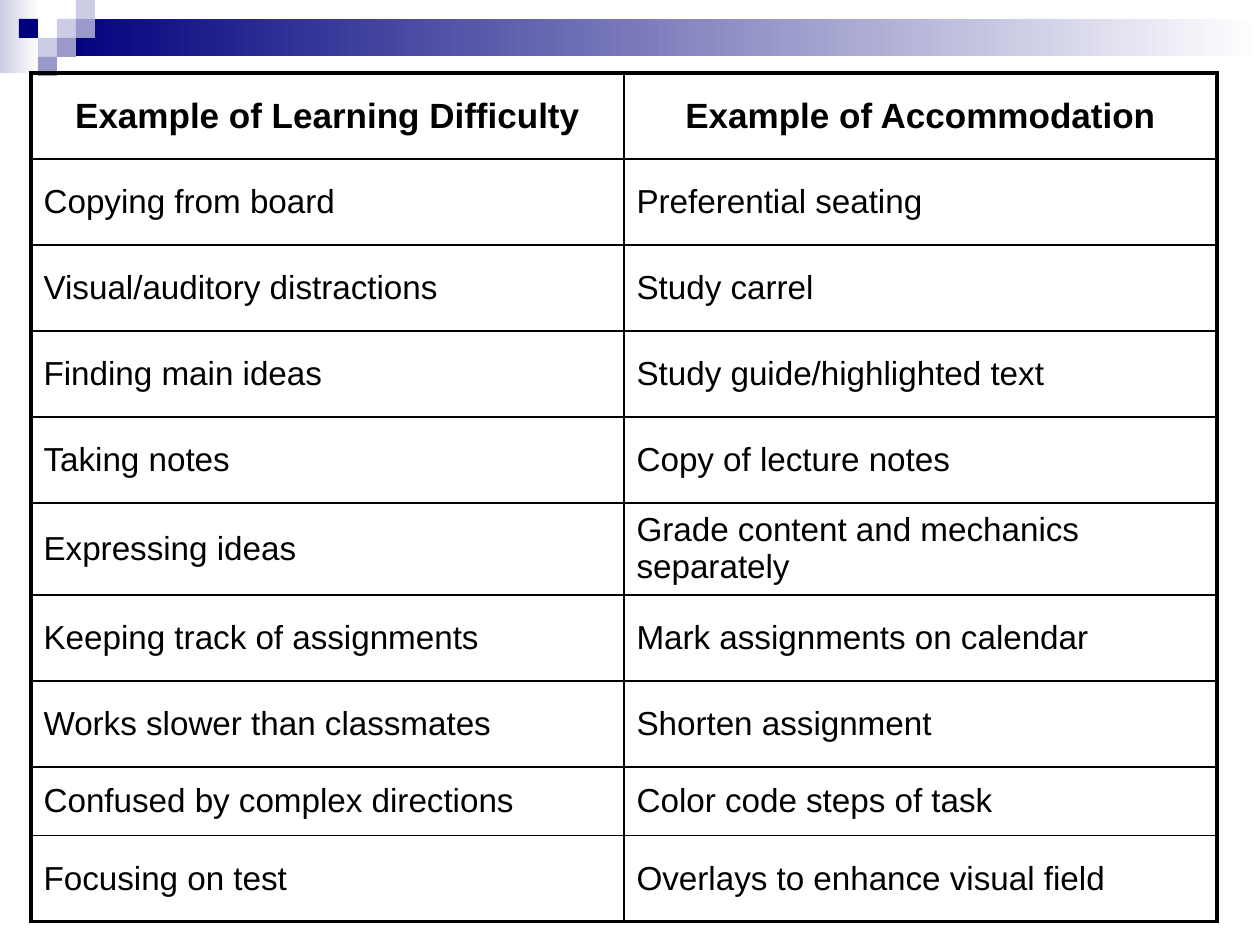
from dataclasses import dataclass

import pptx
import pptx.dml.color
import pptx.enum.shapes
import pptx.enum.text
import pptx.oxml
import pptx.oxml.ns
import pptx.util

EMU_PER_PX = 914400 / 126


def px(length):
    return pptx.util.Emu(round(length * EMU_PER_PX))


def rgb(value):
    return pptx.dml.color.RGBColor.from_string(value)


@dataclass(frozen=True)
class Theme:
    font: str = "Arial"
    header_size: int = 20
    body_size: int = 19
    ink: str = "000000"
    white: str = "FFFFFF"
    navy: str = "00007D"
    violet: str = "9999CC"
    lavender: str = "CCCCE6"
    outer_line: float = 2.25
    inner_line: float = 1


class SlideBuilder:
    def __init__(self, slide, theme):
        self.slide = slide
        self.theme = theme

    def rectangle(self, left, top, width, height, color, fade_to=None):
        shape = self.slide.shapes.add_shape(
            pptx.enum.shapes.MSO_SHAPE.RECTANGLE,
            px(left), px(top), px(width), px(height))
        shape.shadow.inherit = False
        shape.line.fill.background()
        if fade_to is None:
            shape.fill.solid()
            shape.fill.fore_color.rgb = rgb(color)
            return
        shape.fill.gradient()
        shape.fill.gradient_angle = 0
        for stop, position, stop_color in zip(
                shape.fill.gradient_stops, (0, 1), (color, fade_to)):
            stop.position = position
            stop.color.rgb = rgb(stop_color)

    def border(self, cell, side, width):
        line = pptx.oxml.parse_xml(
            f'<a:ln{side} {pptx.oxml.ns.nsdecls("a")} w="{pptx.util.Pt(width)}">'
            f'<a:solidFill><a:srgbClr val="{self.theme.ink}"/></a:solidFill>'
            f'</a:ln{side}>')
        cell._tc.get_or_add_tcPr().append(line)

    def cell_text(self, cell, text, is_header):
        cell.vertical_anchor = pptx.enum.text.MSO_ANCHOR.MIDDLE
        paragraph = cell.text_frame.paragraphs[0]
        alignment = pptx.enum.text.PP_ALIGN
        paragraph.alignment = alignment.CENTER if is_header else alignment.LEFT
        run = paragraph.add_run()
        run.text = text
        run.font.name = self.theme.font
        run.font.size = pptx.util.Pt(
            self.theme.header_size if is_header else self.theme.body_size)
        run.font.bold = is_header
        run.font.color.rgb = rgb(self.theme.ink)

    def table(self, left, top, column_width, row_heights, rows):
        row_count, column_count = len(rows), len(rows[0])
        table = self.slide.shapes.add_table(
            row_count, column_count, px(left), px(top),
            px(column_width * column_count), px(sum(row_heights))).table
        table.first_row = False
        table.horz_banding = False
        for column in table.columns:
            column.width = px(column_width)
        for row_index, (height, texts) in enumerate(zip(row_heights, rows)):
            table.rows[row_index].height = px(height)
            for column_index, text in enumerate(texts):
                cell = table.cell(row_index, column_index)
                self.cell_text(cell, text, is_header=row_index == 0)
                outer_sides = {
                    "L": column_index == 0,
                    "R": column_index == column_count - 1,
                    "T": row_index == 0,
                    "B": row_index == row_count - 1,
                }
                for side, is_outer in outer_sides.items():
                    self.border(cell, side, self.theme.outer_line
                                if is_outer else self.theme.inner_line)
                cell.fill.background()


ACCOMMODATIONS = [
    ("Example of Learning Difficulty", "Example of Accommodation"),
    ("Copying from board", "Preferential seating"),
    ("Visual/auditory distractions", "Study carrel"),
    ("Finding main ideas", "Study guide/highlighted text"),
    ("Taking notes", "Copy of lecture notes"),
    ("Expressing ideas", "Grade content and mechanics separately"),
    ("Keeping track of assignments", "Mark assignments on calendar"),
    ("Works slower than classmates", "Shorten assignment"),
    ("Confused by complex directions", "Color code steps of task"),
    ("Focusing on test", "Overlays to enhance visual field"),
]


def main():
    theme = Theme()
    presentation = pptx.Presentation()
    presentation.slide_width = px(1260)
    presentation.slide_height = px(945)
    blank_layout = presentation.slide_layouts[6]
    builder = SlideBuilder(presentation.slides.add_slide(blank_layout), theme)

    # Fading bands along the top
    builder.rectangle(0, 0, 39, 73, theme.lavender, fade_to=theme.white)
    builder.rectangle(57, 19, 1203, 37, theme.navy, fade_to=theme.white)

    # Mosaic squares, placed by column and row of a square grid
    square = 19
    mosaic = [
        (3, 1, theme.lavender), (4, 0, theme.lavender), (4, 1, theme.violet),
        (2, 2, theme.lavender), (1, 1, theme.navy), (3, 2, theme.violet),
        (2, 3, theme.violet),
    ]
    for column, row, color in mosaic:
        builder.rectangle(column * square, row * square, square, square, color)

    # Table of difficulties and accommodations
    row_heights = [86] * 5 + [92] + [86] * 2 + [69, 86]
    builder.table(31, 73, 593, row_heights, ACCOMMODATIONS)

    presentation.save("out.pptx")


if __name__ == "__main__":
    main()
